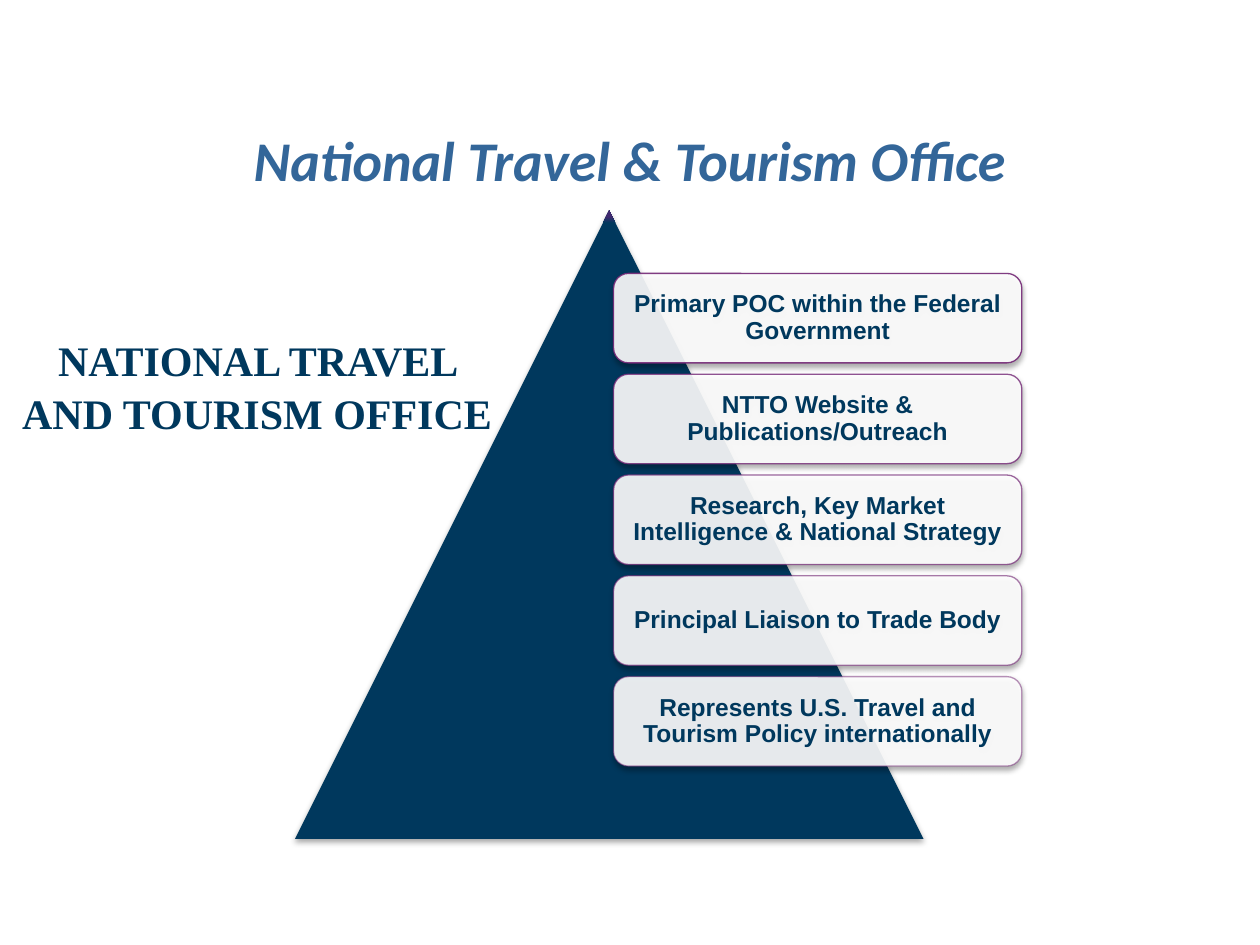
from lxml.etree import SubElement
from pptx import Presentation
from pptx.dml.color import RGBColor
from pptx.enum.shapes import MSO_SHAPE
from pptx.enum.text import MSO_ANCHOR, PP_ALIGN
from pptx.oxml.ns import qn
from pptx.util import Inches, Pt

NAVY, BLUE, PLUM, WHITE = "00385D", "336699", "742876", "FFFFFF"
TITLE = "National Travel & Tourism Office"
LABEL = "NATIONAL TRAVEL AND TOURISM OFFICE"
ROLES = [
    "Primary POC within the Federal Government",
    "NTTO Website & Publications/Outreach",
    "Research, Key Market Intelligence & National Strategy",
    "Principal Liaison to Trade Body",
    "Represents U.S. Travel and Tourism Policy internationally",
]
LEFT, TOP, WIDE, HIGH, STEP = 4.87, 2.17, 3.24, 0.71, 0.8


def rgb(code):
    """Turn a hex string into a colour."""
    return RGBColor.from_string(code)


def fade(fill, percent):
    """Set the opacity of a solid fill."""
    color = fill._xPr.find(qn("a:solidFill"))[0]
    SubElement(color, qn("a:alpha"), val=str(percent * 1000))


def shade(shape):
    """Give a shape a soft shadow below it."""
    shape.shadow.inherit = False
    effects = shape._element.spPr.find(qn("a:effectLst"))
    outer = SubElement(effects, qn("a:outerShdw"), blurRad=str(Pt(3.1)),
                       dist=str(Pt(1.8)), dir="5400000", rotWithShape="0")
    color = SubElement(outer, qn("a:srgbClr"), val="000000")
    SubElement(color, qn("a:alpha"), val="35000")


def write(shape, text, size, name, color, space=1.0, italic=False):
    """Write one centred bold paragraph into a shape."""
    frame = shape.text_frame
    frame.word_wrap = True
    para = frame.paragraphs[0]
    para.text = text
    para.alignment = PP_ALIGN.CENTER
    para.line_spacing = space
    font = para.font
    font.size, font.name, font.bold, font.italic = Pt(size), name, True, italic
    font.color.rgb = rgb(color)
    return frame


def peak(slide):
    """Draw the triangle with its tinted tip."""
    shape = slide.shapes.add_shape(MSO_SHAPE.ISOSCELES_TRIANGLE, Inches(2.34),
                                   Inches(1.67), Inches(4.99), Inches(4.99))
    shape.fill.gradient()
    shape.fill.gradient_angle = 90
    stops = [(0.98, NAVY), (0.99, "3F296F")]
    for stop, (place, color) in zip(shape.fill.gradient_stops, stops):
        stop.position = place
        stop.color.rgb = rgb(color)
    shape.line.fill.background()
    shade(shape)


def card(slide, row, text):
    """Draw one role card in the stack."""
    shape = slide.shapes.add_shape(MSO_SHAPE.ROUNDED_RECTANGLE, Inches(LEFT),
                                   Inches(TOP + row * STEP), Inches(WIDE), Inches(HIGH))
    shape.fill.solid()
    shape.fill.fore_color.rgb = rgb(WHITE)
    fade(shape.fill, 90)
    shape.line.width = Pt(0.75)
    shape.line.color.rgb = rgb(PLUM)
    fade(shape.line.fill, 90 - 10 * row)
    shade(shape)
    frame = write(shape, text, 14, "Arial", NAVY, 0.9)
    frame.vertical_anchor = MSO_ANCHOR.MIDDLE
    frame.margin_left = frame.margin_right = Inches(0.06)
    frame.margin_top = frame.margin_bottom = Inches(0.06)


def main():
    """Build and save the slide."""
    deck = Presentation()
    deck.slide_width, deck.slide_height = Inches(10), Inches(7.5)
    slide = deck.slides.add_slide(deck.slide_layouts[6])
    title = slide.shapes.add_textbox(0, Inches(0.95), Inches(10), Inches(0.96))
    write(title, TITLE, 32, "Calibri", BLUE, italic=True)
    peak(slide)
    for row, text in enumerate(ROLES):
        card(slide, row, text)
    label = slide.shapes.add_textbox(0, Inches(2.58), Inches(4.08), Inches(0.91))
    write(label, LABEL, 24, "Times New Roman", NAVY, 1.06)
    deck.save("out.pptx")


if __name__ == "__main__":
    main()
